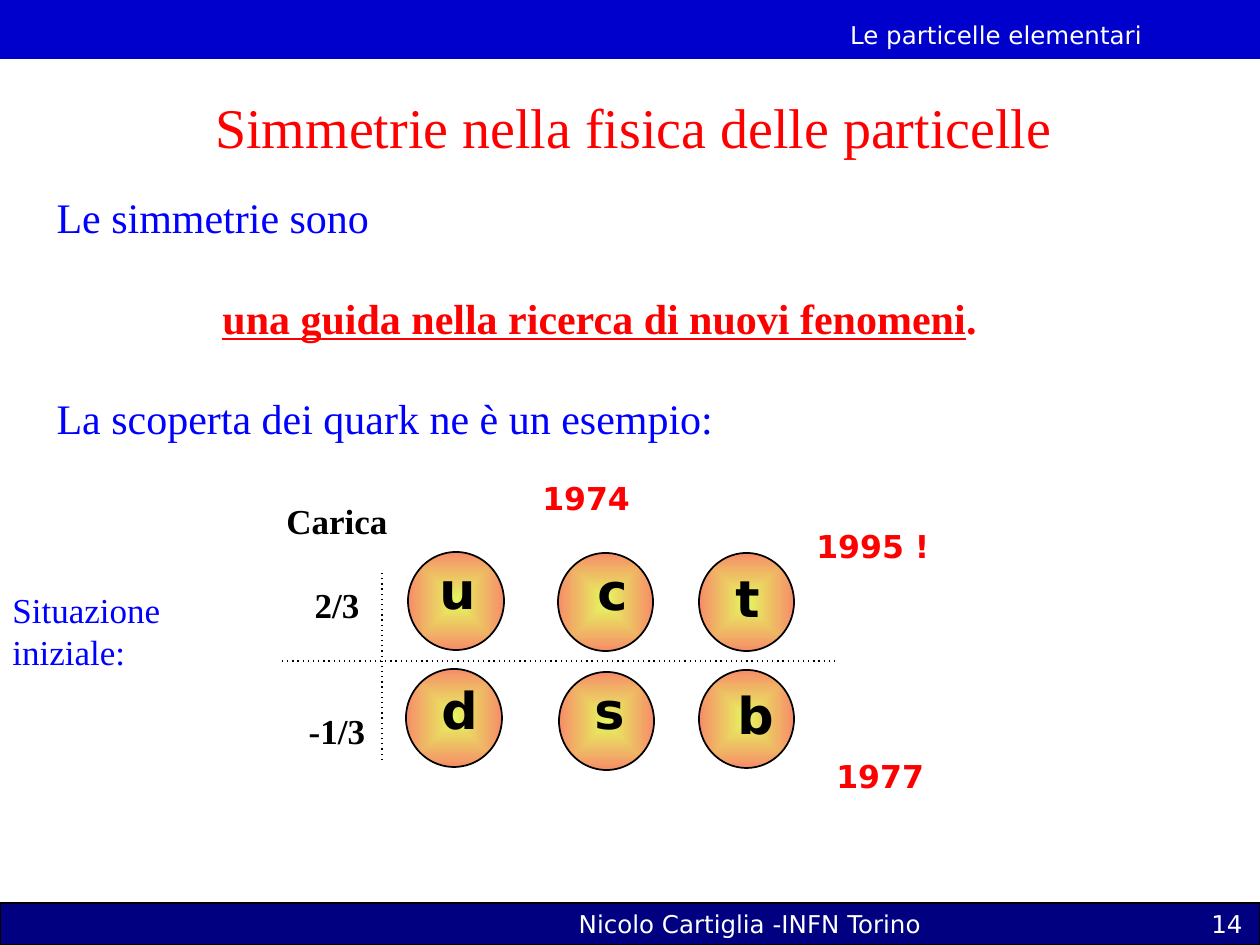
import pptx
import pptx.util
from lxml import etree
from pptx.dml.color import RGBColor
from pptx.enum.dml import MSO_LINE
from pptx.enum.shapes import MSO_CONNECTOR, MSO_SHAPE
from pptx.enum.text import MSO_ANCHOR, MSO_AUTO_SIZE, PP_ALIGN
from pptx.oxml.ns import qn

PX_PER_INCH = 126
SERIF, SANS = "Times New Roman", "DejaVu Sans"
RED, BLUE, BLACK, WHITE = "FF0000", "0000FF", "000000", "FFFFFF"
BAR_TEXT = {"name": SANS, "size": 14, "color": WHITE}
DATE_TEXT = {"name": SANS, "size": 18, "color": RED, "bold": True}
QUARK_TEXT = {"name": SANS, "size": 29, "color": BLACK, "bold": True}
BODY_TEXT = {"name": SERIF, "size": 24, "color": BLUE}
KEY_TEXT = {"name": SERIF, "size": 24, "color": RED, "bold": True}

# letter, circle (left, top, width), letter position, date of discovery and its box
QUARKS = [
    ("u", (408, 552, 96), (428, 553), None),
    ("d", (406, 669, 96), (430, 673), None),
    ("s", (559, 672, 95), (583, 673), None),
    ("c", (558, 553, 95), (586, 554), ("1974", (530, 473, 115, 50))),
    ("t", (699, 553, 95), (724, 561), ("1995 !", (804, 521, 139, 50))),
    ("b", (699, 670, 95), (726, 678), ("1977", (824, 751, 115, 50))),
]


def px(*lengths):
    return [pptx.util.Emu(round(n * 914400 / PX_PER_INCH)) for n in lengths]


def rgb(hex_color):
    return RGBColor.from_string(hex_color)


def style(font, formats):
    for key, value in formats.items():
        if key == "color":
            font.color.rgb = rgb(value)
        elif key == "size":
            font.size = pptx.util.Pt(value)
        else:
            setattr(font, key, value)


def write(frame, paragraphs, wrap=True):
    """Fill a frame with paragraphs of (runs, alignment, space before in pt)."""
    frame.word_wrap = wrap
    frame.auto_size = MSO_AUTO_SIZE.NONE
    frame.vertical_anchor = MSO_ANCHOR.TOP
    for index, (runs, alignment, before) in enumerate(paragraphs):
        paragraph = frame.add_paragraph() if index else frame.paragraphs[0]
        paragraph.alignment = alignment
        paragraph.space_before = pptx.util.Pt(before)
        for text, formats in runs:
            run = paragraph.add_run()
            run.text = text
            style(run.font, formats)
        if formats["name"] == SERIF:
            paragraph.line_spacing = pptx.util.Pt(1.2 * formats["size"])


def add_label(shapes, box, text, formats, alignment=PP_ALIGN.LEFT, wrap=True):
    frame = shapes.add_textbox(*px(*box)).text_frame
    write(frame, [([(text, formats)], alignment, 0)], wrap)
    return frame


def add_bar(shapes, box, color, outline=None):
    bar = shapes.add_shape(MSO_SHAPE.RECTANGLE, *px(*box))
    bar.shadow.inherit = False
    bar.fill.solid()
    bar.fill.fore_color.rgb = rgb(color)
    if outline:
        bar.line.color.rgb = rgb(outline)
        bar.line.width = pptx.util.Pt(0.75)
    else:
        bar.line.fill.background()


def glow_from_center(shape, inner, outer):
    shape.fill.gradient()
    for stop, color, position in zip(shape.fill.gradient_stops, (inner, outer), (0, 1)):
        stop.color.rgb = rgb(color)
        stop.position = position
    gradient = shape._element.spPr.find(qn("a:gradFill"))
    gradient.remove(gradient.find(qn("a:lin")))
    shading = etree.SubElement(gradient, qn("a:path"), {"path": "shape"})
    etree.SubElement(shading, qn("a:fillToRect"), dict.fromkeys("ltrb", "50000"))


def add_quark(shapes, letter, circle, letter_at, discovery):
    if discovery:
        shapes = shapes.add_group_shape().shapes
    ball = shapes.add_shape(MSO_SHAPE.OVAL, *px(*circle, 98))
    ball.shadow.inherit = False
    glow_from_center(ball, "E5F75F", "F68D68")
    ball.line.color.rgb = rgb(BLACK)
    ball.line.width = pptx.util.Pt(1)
    frame = add_label(shapes, (*letter_at, 59, 72), letter, QUARK_TEXT, wrap=False)
    frame.margin_left = frame.margin_right = pptx.util.Inches(0.09)
    if discovery:
        date, box = discovery
        add_label(shapes, box, date, DATE_TEXT, wrap=False)


def add_dotted_line(shapes, *ends):
    line = shapes.add_connector(MSO_CONNECTOR.STRAIGHT, *px(*ends))
    line.line.color.rgb = rgb(BLACK)
    line.line.width = pptx.util.Pt(0.75)
    line.line.dash_style = MSO_LINE.ROUND_DOT
    properties = line._element.spPr
    properties.find(".//" + qn("a:prstDash")).set("val", "dot")
    etree.SubElement(properties, qn("a:effectLst"))


def fill_placeholder(placeholder, box, paragraphs):
    placeholder.left, placeholder.top, placeholder.width, placeholder.height = px(*box)
    write(placeholder.text_frame, paragraphs)


def remove_bullets(frame):
    for paragraph in frame.paragraphs:
        properties = paragraph._p.get_or_add_pPr()
        properties.set("marL", "0")
        properties.set("indent", "0")
        etree.SubElement(properties, qn("a:buNone"))


def main():
    deck = pptx.Presentation()
    deck.slide_width, deck.slide_height = px(1260, 945)
    slide = deck.slides.add_slide(deck.slide_layouts[1])
    shapes = slide.shapes
    center, left = PP_ALIGN.CENTER, PP_ALIGN.LEFT

    add_bar(shapes, (0, 903, 1260, 42), "000080", BLACK)
    add_bar(shapes, (-5, 0, 1265, 59), "0000CC")
    add_label(shapes, (796, 14, 400, 42), "Le particelle elementari", BAR_TEXT, center)
    add_label(shapes, (550, 903, 400, 42), "Nicolo Cartiglia -INFN Torino", BAR_TEXT, center)
    add_label(shapes, (993, 903, 262, 42), "14", BAR_TEXT, PP_ALIGN.RIGHT)

    title_text = {"name": SERIF, "size": 32, "color": RED}
    fill_placeholder(shapes.title, (36, 86, 1196, 149), [
        ([("Simmetrie nella fisica delle particelle", title_text)], center, 0),
    ])
    body = slide.placeholders[1]
    fill_placeholder(body, (44, 185, 1111, 420), [
        ([("Le simmetrie sono", BODY_TEXT)], left, 0),
        ([("una guida nella ricerca di nuovi fenomeni", {**KEY_TEXT, "underline": True}),
          (".", KEY_TEXT)], center, 28.8),
        ([("La scoperta dei quark ne è un esempio:", BODY_TEXT)], left, 28.8),
    ])
    remove_bullets(body.text_frame)

    add_label(shapes, (0, 582, 208, 97), "Situazione iniziale:", {**BODY_TEXT, "size": 20})
    for quark in QUARKS:
        add_quark(shapes, *quark)

    charge_text = {"name": SERIF, "size": 20, "color": BLACK, "bold": True}
    charges = shapes.add_textbox(*px(273, 493, 128, 267)).text_frame
    write(charges, [([(text, charge_text)], center, before)
                    for text, before in (("Carica", 0), ("2/3", 24), ("-1/3", 48))], wrap=False)
    add_dotted_line(shapes, 282, 661, 838, 661)
    add_dotted_line(shapes, 382, 760, 382, 572)

    deck.save("out.pptx")


if __name__ == "__main__":
    main()
